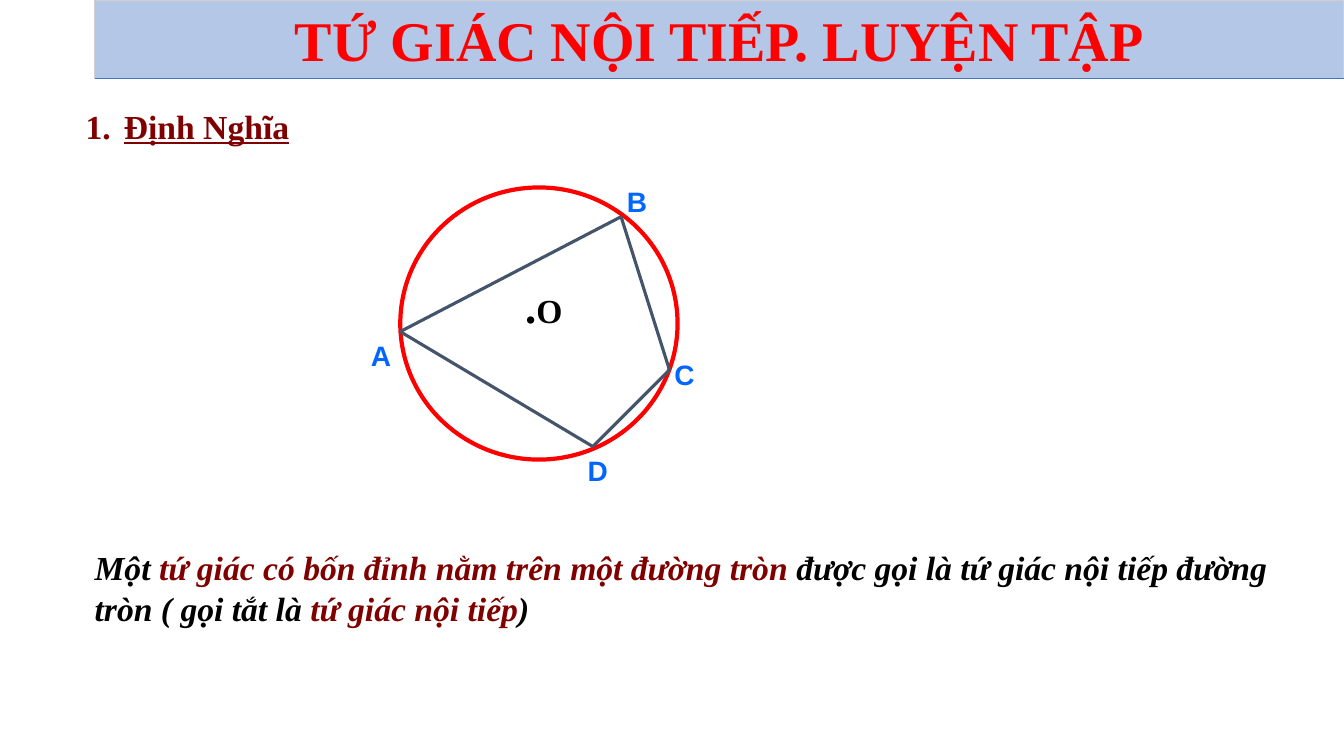
from lxml import etree
from pptx import Presentation
from pptx.dml.color import RGBColor
from pptx.enum.shapes import MSO_CONNECTOR, MSO_SHAPE
from pptx.enum.text import MSO_ANCHOR, MSO_AUTO_SIZE, PP_ALIGN
from pptx.oxml.ns import qn
from pptx.util import Inches, Pt

LINE = MSO_CONNECTOR.STRAIGHT
OVAL = MSO_SHAPE.OVAL
BOTTOM = MSO_ANCHOR.BOTTOM
FIXED = MSO_AUTO_SIZE.NONE
CENTER = PP_ALIGN.CENTER

RED = RGBColor(0xFF, 0x00, 0x00)
MAROON = RGBColor(0x80, 0x00, 0x00)
BLACK = RGBColor(0x00, 0x00, 0x00)
BLUE = RGBColor(0x00, 0x66, 0xFF)
SLATE = RGBColor(0x44, 0x54, 0x6A)
PALE = RGBColor(0xB4, 0xC7, 0xE7)
GRAY = RGBColor(0xD0, 0xCE, 0xCE)
RULE = RGBColor(0x44, 0x72, 0xC4)

SERIF = "Times New Roman"
SANS = "Arial"


def style(para, face, size, color):
    font = para.font
    font.name = face
    font.size = Pt(size)
    font.bold = True
    font.color.rgb = color


def add_text(shapes, box, parts, face, size, color):
    shape = shapes.add_textbox(*map(Inches, box))
    frame = shape.text_frame
    frame.word_wrap = True
    para = frame.paragraphs[0]
    style(para, face, size, color)
    for text in parts:
        para.add_run().text = text
    return para


def add_line(shapes, start, end, color, width):
    line = shapes.add_connector(LINE, *map(Inches, (*start, *end)))
    line.line.color.rgb = color
    line.line.width = Pt(width)
    props = line._element.spPr
    etree.SubElement(props, qn("a:effectLst"))


def add_title(slide, box):
    left, top, width, height = box
    title = slide.shapes.title
    title.left, title.top, title.width, title.height = map(Inches, box)
    title.fill.solid()
    title.fill.fore_color.rgb = PALE
    title.line.color.rgb = GRAY
    title.line.width = Pt(0.75)
    frame = title.text_frame
    frame.text = "TỨ GIÁC NỘI TIẾP. LUYỆN TẬP"
    frame.auto_size = FIXED
    frame.vertical_anchor = BOTTOM
    para = frame.paragraphs[0]
    para.alignment = CENTER
    para.line_spacing = 0.9
    style(para, SERIF, 40, RED)
    base = top + height
    add_line(slide.shapes, (left, base), (left + width, base), RULE, 0.5)


def add_heading(slide, box):
    para = add_text(slide.shapes, box, ["Định Nghĩa"], SERIF, 24, MAROON)
    para.runs[0].font.underline = True
    props = para._p.get_or_add_pPr()
    props.set("marL", str(Inches(0.88)))
    props.set("indent", str(Inches(-0.38)))
    etree.SubElement(props, qn("a:buAutoNum"), type="arabicPeriod")


def add_figure(slide, box):
    left, top, width, height = box
    shapes = slide.shapes.add_group_shape().shapes

    center = (left + 1.14, top + 0.86, 0.82, 0.75)
    para = add_text(shapes, center, [".", "O"], SERIF, 32, BLACK)
    para.runs[1].font.size = Pt(24)

    circle = shapes.add_shape(OVAL, *map(Inches, box))
    circle.shadow.inherit = False
    circle.fill.background()
    circle.line.color.rgb = RED
    circle.line.width = Pt(3)

    corners = [
        ("A", 0, 1.43, -0.39, 0.02),
        ("B", 2.19, 0.29, -0.04, -0.37),
        ("C", 2.67, 1.81, -0.05, -0.17),
        ("D", 1.91, 2.57, -0.15, 0.02),
    ]
    points = [(left + x, top + y) for _, x, y, _, _ in corners]
    for start, end in zip(points, points[1:] + points[:1]):
        add_line(shapes, start, end, SLATE, 2.25)
    for (name, _, _, dx, dy), (x, y) in zip(corners, points):
        add_text(shapes, (x + dx, y + dy, 0.57, 0.43), [name], SANS, 20, BLUE)


def add_meaning(slide, box):
    parts = [
        "Một ",
        "tứ giác có bốn đỉnh nằm trên một đường tròn ",
        "được gọi là tứ giác nội tiếp đường tròn ( gọi tắt là ",
        "tứ giác nội tiếp",
        ")",
    ]
    para = add_text(slide.shapes, box, parts, SERIF, 24, BLACK)
    para.font.italic = True
    for run in para.runs[1::2]:
        run.font.color.rgb = MAROON


def main():
    deck = Presentation()
    deck.slide_width = Inches(13.33)
    deck.slide_height = Inches(7.5)
    slide = deck.slides.add_slide(deck.slide_layouts[5])
    add_title(slide, (0.94, 0, 12.39, 0.78))
    add_heading(slide, (0.25, 1, 5.58, 0.5))
    add_figure(slide, (3.97, 1.86, 2.75, 2.7))
    add_meaning(slide, (0.84, 5.38, 12.01, 0.91))
    deck.save("out.pptx")


if __name__ == "__main__":
    main()
